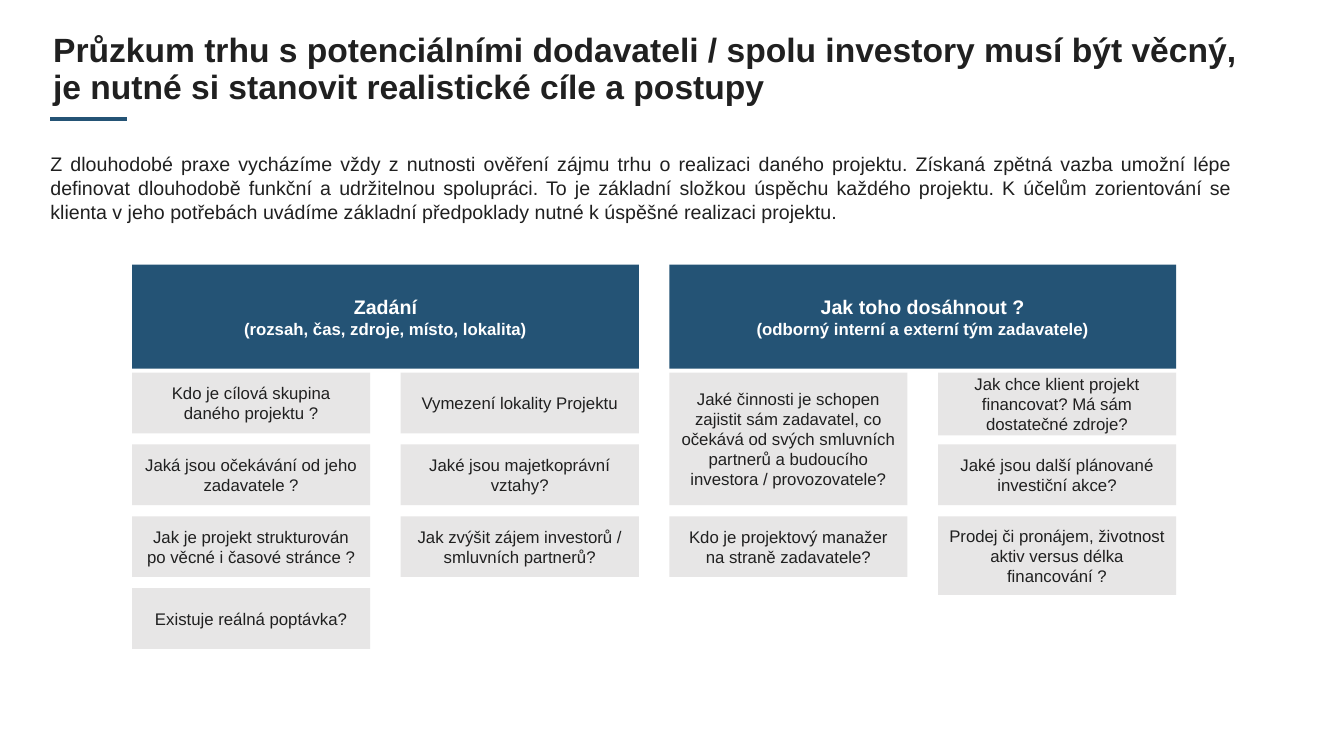
"""Builds a slide on market research with potential suppliers."""
import pptx
import pptx.dml.color
import pptx.enum.shapes
import pptx.enum.text
import pptx.util
from lxml import etree

Cm = pptx.util.Cm
ALIGN = pptx.enum.text.PP_ALIGN
ANCHOR = pptx.enum.text.MSO_ANCHOR

BLUE, GREY, INK, WHITE = "245375", "E7E6E6", "202020", "FFFFFF"
GRID_LEFT, GRID_TOP = 3.33, 9.39
COLUMN_STEP, ROW_STEP = 6.77, 1.81
CARD_WIDTH, CARD_HEIGHT = 6, 1.53
HEADER_TOP, HEADER_HEIGHT = 6.67, 2.62

TITLE = ("Průzkum trhu s potenciálními dodavateli / spolu investory musí být věcný, "
         "je nutné si stanovit realistické cíle a postupy")
INTRO = ("Z dlouhodobé praxe vycházíme vždy z nutnosti ověření zájmu trhu o realizaci "
         "daného projektu. Získaná zpětná vazba umožní lépe definovat dlouhodobě funkční "
         "a udržitelnou spolupráci. To je základní složkou úspěchu každého projektu. "
         "K účelům zorientování se klienta v jeho potřebách uvádíme základní předpoklady "
         "nutné k úspěšné realizaci projektu.")
HEADERS = [
    ("Zadání", "(rozsah, čas, zdroje, místo, lokalita)"),
    ("Jak toho dosáhnout ?", "(odborný interní a externí tým zadavatele)"),
]
CARDS = [
    (0, 0, CARD_HEIGHT, "Kdo je cílová skupina daného projektu ?"),
    (0, 1, CARD_HEIGHT, "Jaká jsou očekávání od jeho zadavatele ?"),
    (0, 2, CARD_HEIGHT, "Jak je projekt strukturován po věcné i časové stránce ?"),
    (0, 3, CARD_HEIGHT, "Existuje reálná poptávka?"),
    (1, 0, CARD_HEIGHT, "Vymezení lokality Projektu"),
    (1, 1, CARD_HEIGHT, "Jaké jsou majetkoprávní vztahy?"),
    (1, 2, CARD_HEIGHT, "Jak zvýšit zájem investorů / smluvních partnerů?"),
    (2, 0, ROW_STEP + CARD_HEIGHT,
     "Jaké činnosti je schopen zajistit sám zadavatel, co očekává od svých smluvních "
     "partnerů a budoucího investora / provozovatele?"),
    (2, 2, CARD_HEIGHT, "Kdo je projektový manažer na straně zadavatele?"),
    (3, 0, 1.58, "Jak chce klient projekt financovat? Má sám dostatečné zdroje?"),
    (3, 1, CARD_HEIGHT, "Jaké jsou další plánované investiční akce?"),
    (3, 2, 1.98, "Prodej či pronájem, životnost aktiv versus délka financování ?"),
]


def colour(value):
    """Return the colour for a hex string."""
    return pptx.dml.color.RGBColor.from_string(value)


def write(para, text, size=12, ink=INK, bold=False, align=ALIGN.LEFT, after=0, spacing=1.0):
    """Put formatted text into a paragraph."""
    para.alignment = align
    para.space_after = pptx.util.Pt(after)
    para.line_spacing = spacing
    span = para.add_run()
    span.text = text
    span.font.name = "Arial"
    span.font.size = pptx.util.Pt(size)
    span.font.bold = bold
    span.font.color.rgb = colour(ink)


def add_text(page, left, top, width, height, text, inset=None, **style):
    """Add a wrapping text box with one paragraph."""
    frame = page.shapes.add_textbox(Cm(left), Cm(top), Cm(width), Cm(height)).text_frame
    frame.word_wrap = True
    if inset is not None:
        frame.margin_left = frame.margin_right = Cm(inset)
        frame.margin_top = frame.margin_bottom = Cm(inset)
    write(frame.paragraphs[0], text, **style)


def add_box(page, left, top, width, height, fill):
    """Add a plain filled rectangle and return its text frame."""
    box = page.shapes.add_shape(pptx.enum.shapes.MSO_SHAPE.RECTANGLE,
                                Cm(left), Cm(top), Cm(width), Cm(height))
    box.shadow.inherit = False
    box.fill.solid()
    box.fill.fore_color.rgb = colour(fill)
    box.line.fill.background()
    frame = box.text_frame
    frame.word_wrap = True
    frame.vertical_anchor = ANCHOR.MIDDLE
    return frame


def add_header(page, index, heading, detail):
    """Add a blue header that spans two columns of cards."""
    frame = add_box(page, GRID_LEFT + 2 * index * COLUMN_STEP, HEADER_TOP,
                    COLUMN_STEP + CARD_WIDTH, HEADER_HEIGHT, BLUE)
    style = {"ink": WHITE, "bold": True, "align": ALIGN.CENTER}
    write(frame.paragraphs[0], heading, size=14, **style)
    write(frame.add_paragraph(), detail, **style)


def add_card(page, column, row, height, text):
    """Add a grey question card at a grid position."""
    frame = add_box(page, GRID_LEFT + column * COLUMN_STEP, GRID_TOP + row * ROW_STEP,
                    CARD_WIDTH, height, GREY)
    write(frame.paragraphs[0], text, align=ALIGN.CENTER, after=6)


def add_rule(page, left, top, width):
    """Add a horizontal accent line without a shadow."""
    rule = page.shapes.add_connector(pptx.enum.shapes.MSO_CONNECTOR.STRAIGHT,
                                     Cm(left), Cm(top), Cm(left + width), Cm(top))
    rule.line.color.rgb = colour(BLUE)
    rule.line.width = pptx.util.Pt(3.5)
    etree.SubElement(rule._element.spPr, pptx.oxml.ns.qn("a:effectLst"))


def main():
    """Build and save the deck."""
    deck = pptx.Presentation()
    deck.slide_width, deck.slide_height = Cm(33.87), Cm(19.05)
    page = deck.slides.add_slide(deck.slide_layouts[6])
    add_text(page, 1.09, 0.71, 30.81, 2.11, TITLE, size=24, bold=True, spacing=0.92)
    add_rule(page, 1.27, 3, 1.93)
    add_text(page, 1.27, 3.84, 29.79, 3.71, INTRO, inset=0, size=14, align=ALIGN.JUSTIFY)
    for index, (heading, detail) in enumerate(HEADERS):
        add_header(page, index, heading, detail)
    for card in CARDS:
        add_card(page, *card)
    deck.save("out.pptx")


if __name__ == "__main__":
    main()
